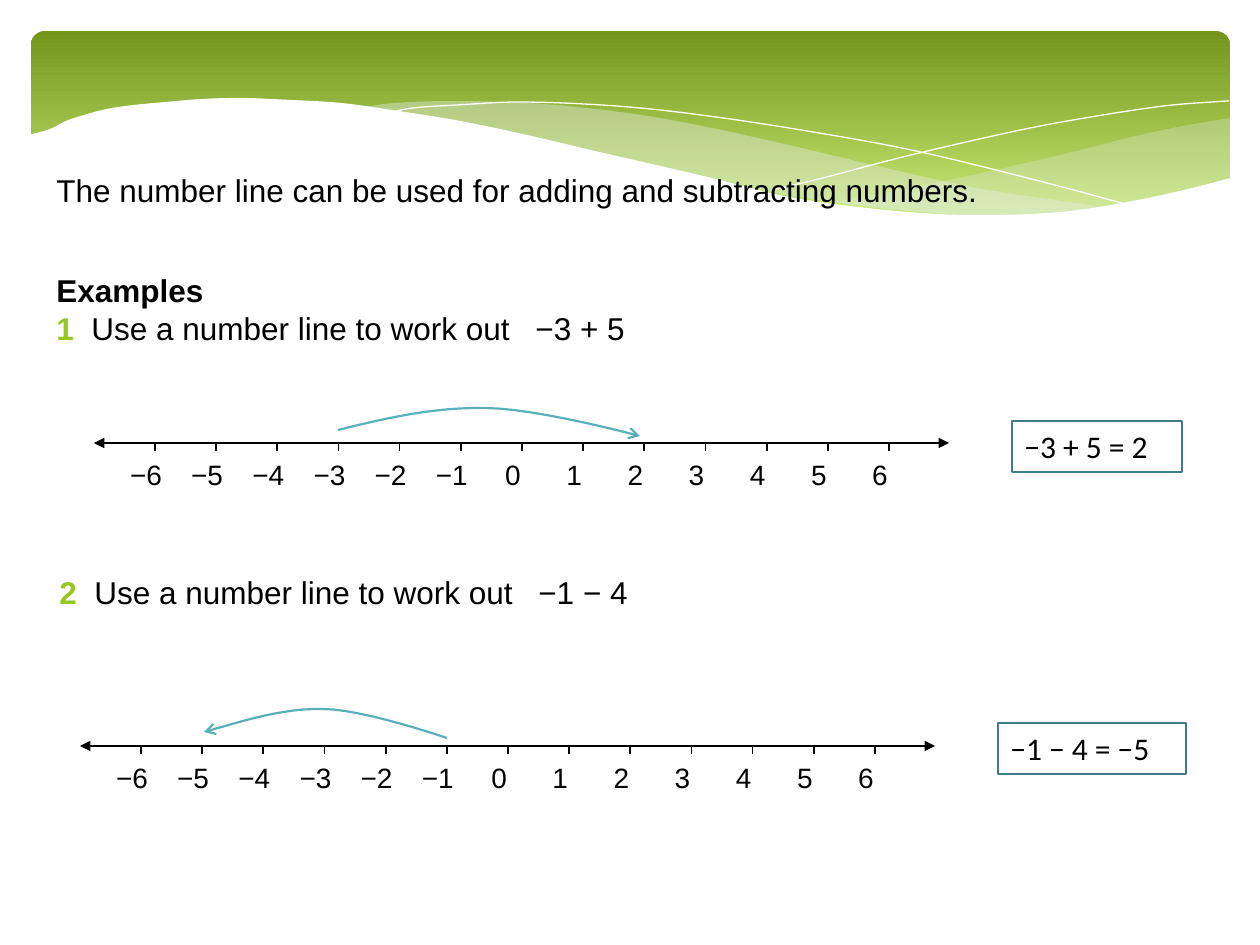
from lxml.etree import SubElement
from pptx import Presentation
from pptx.dml.color import RGBColor
from pptx.enum.shapes import MSO_CONNECTOR, MSO_SHAPE
from pptx.enum.text import MSO_ANCHOR
from pptx.oxml.ns import qn
from pptx.util import Pt

PX = 914400 / 126
COLORS = {
    "black": "000000", "white": "FFFFFF", "mist": "E7ECED", "number": "98C723",
    "dark_green": "72951A", "light_green": "C5E672", "arc": "59B0B9", "box": "3F7C83",
}
INTRO = "The number line can be used for adding and subtracting numbers."
LABELS = ["−6", "−5", "−4", "−3", "−2", "−1", "0", "1", "2", "3", "4", "5", "6"]
TICK_START, TICK_SPAN, TICK_HEIGHT, LINE_WIDTH = 61, 734, 8, 855
LABEL_SHIFT, LABEL_MARGIN = -9, 28
QUESTION_TABS = [35, 479]

EXAMPLES = [
    {"number": "1", "sum": "−3 + 5", "heading": "Examples", "question": (44, 265, 601, 89),
     "line": (94, 443), "answer": "−3 + 5 = 2", "answer_box": (1012, 421, 170, 51),
     "arc": [(338, 430), (386, 418), (435, 407), (485, 408),
             (536, 408), (640, 436), (640, 436)]},
    {"number": "2", "sum": "−1 − 4", "heading": None, "question": (47, 567, 601, 51),
     "line": (80, 746), "answer": "−1 − 4 = −5", "answer_box": (998, 723, 188, 51),
     "arc": [(447, 738), (447, 738), (363, 709), (323, 709),
             (282, 708), (243, 721), (204, 732)]},
]

RIGHT_WAVE = [
    [(1230, 118), (1178, 127), (1123, 139), (1085, 149), (982, 173), (890, 192), (833, 202)],
    [(833, 202), (906, 210), (969, 215), (1026, 217), (1076, 214), (1130, 208),
     (1178, 197), (1230, 178)],
]
MIDDLE_WAVE = [
    [(1125, 210), (1055, 200), (977, 188), (890, 169), (793, 146), (717, 129), (648, 116),
     (586, 108), (529, 103), (455, 101), (394, 103), (360, 108)],
    [(360, 108), (431, 118), (509, 134), (619, 159), (713, 180), (799, 197), (876, 208),
     (942, 214), (1017, 218), (1080, 215), (1125, 210)],
]
FALLING_LINE = [[(389, 113), (413, 108), (457, 105), (524, 102), (616, 106), (701, 115),
                 (801, 130), (916, 151), (1047, 183), (1143, 209)]]
RISING_LINE = [[(772, 190), (823, 178), (907, 156), (1016, 131), (1091, 117), (1164, 106),
                (1213, 102), (1229, 101)]]
WHITE_WAVE = [
    [(1231, 178), (1184, 190), (1133, 201), (1071, 211), (1003, 215), (937, 214), (867, 208),
     (789, 197), (699, 175), (599, 152), (527, 135), (460, 121), (398, 111), (341, 103),
     (290, 100), (243, 98), (203, 99), (166, 102), (134, 105), (107, 109), (84, 115),
     (66, 121), (50, 129), (29, 135)],
    [(29, 282), (1231, 282)],
]


def px(value):
    return round(value * PX)


def rgb(name):
    return RGBColor.from_string(COLORS[name])


def bezier(a, b, c, d, steps):
    weights = [((1 - t) ** 3, 3 * t * (1 - t) ** 2, 3 * t * t * (1 - t), t ** 3)
               for t in (i / steps for i in range(1, steps + 1))]
    return [tuple(sum(w * p[k] for w, p in zip(ws, (a, b, c, d))) for k in (0, 1))
            for ws in weights]


def smooth(points):
    ends = [points[0], *points, points[-1]]
    result = [points[0]]
    for p0, p1, p2, p3 in zip(ends, ends[1:], ends[2:], ends[3:]):
        b = tuple(p1[k] + (p2[k] - p0[k]) / 6 for k in (0, 1))
        c = tuple(p2[k] - (p3[k] - p1[k]) / 6 for k in (0, 1))
        result += bezier(p1, b, c, p2, 6)
    return result


def add_path(points, fill=None, alpha=None, line=None, width=0):
    (x, y), *rest = [(px(x), px(y)) for x, y in points]
    builder = s.shapes.build_freeform(x, y)
    builder.add_line_segments(rest, close=fill is not None)
    sp = builder.convert_to_shape()
    sp.shadow.inherit = False
    if fill:
        sp.fill.solid()
        sp.fill.fore_color.rgb = rgb(fill)
        sp.line.fill.background()
    else:
        sp.fill.background()
        sp.line.color.rgb = rgb(line)
        sp.line.width = Pt(width)
    if alpha:
        color = sp.element.spPr.find(qn("a:solidFill")).find(qn("a:srgbClr"))
        SubElement(color, qn("a:alpha"), val=str(alpha * 1000))
    return sp


def add_wave(edges, **style):
    return add_path([point for edge in edges for point in smooth(edge)], **style)


def add_arrowhead(sp, end, kind):
    SubElement(sp.element.spPr.find(qn("a:ln")), qn(f"a:{end}"), type=kind)


def add_line(x1, y1, x2, y2):
    cn = s.shapes.add_connector(MSO_CONNECTOR.STRAIGHT, px(x1), px(y1), px(x2), px(y2))
    cn.line.color.rgb = rgb("black")
    cn.line.width = Pt(1)
    SubElement(cn.element.spPr, qn("a:effectLst"))
    return cn


def set_font(font, size, name="Arial"):
    font.size, font.name = Pt(size), name
    font.color.rgb = rgb("black")


def set_tabs(p, stops, align="l"):
    tabs = SubElement(p._p.get_or_add_pPr(), qn("a:tabLst"))
    for stop in stops:
        SubElement(tabs, qn("a:tab"), pos=str(px(stop)), algn=align)


def add_text(box, text, size=18):
    sp = s.shapes.add_textbox(*map(px, box))
    sp.text_frame.word_wrap = True
    p = sp.text_frame.paragraphs[0]
    p.text = text
    set_font(p.font, size)
    return sp.text_frame


def add_question(example):
    tf = add_text(example["question"], example["heading"] or "")
    p = tf.paragraphs[0]
    if example["heading"]:
        p.font.bold = True
        p = tf.add_paragraph()
        set_font(p.font, 18)
    set_tabs(p, QUESTION_TABS)
    r = p.add_run()
    r.text = example["number"]
    r.font.bold = True
    r.font.color.rgb = rgb("number")
    set_font(r.font, 18)
    r.font.color.rgb = rgb("number")
    r = p.add_run()
    r.text = f"\tUse a number line to work out\t{example['sum']}"
    set_font(r.font, 18)


def add_number_line(x, y):
    axis = add_line(x, y, x + LINE_WIDTH, y)
    for end in ("headEnd", "tailEnd"):
        add_arrowhead(axis, end, "triangle")
    step = TICK_SPAN / (len(LABELS) - 1)
    for i in range(len(LABELS)):
        tick = x + TICK_START + i * step
        add_line(tick, y, tick, y + TICK_HEIGHT)
    left = x + TICK_START + LABEL_SHIFT - LABEL_MARGIN
    tf = add_text((left, y + TICK_HEIGHT, 806, 47), "\t" + "\t".join(LABELS), 16)
    tf.margin_left = tf.margin_right = 0
    set_tabs(tf.paragraphs[0], [LABEL_MARGIN + i * step for i in range(len(LABELS))], "ctr")


def add_answer(box, text):
    sp = s.shapes.add_shape(MSO_SHAPE.RECTANGLE, *map(px, box))
    sp.shadow.inherit = False
    sp.fill.solid()
    sp.fill.fore_color.rgb = rgb("white")
    sp.line.color.rgb = rgb("box")
    sp.line.width = Pt(1.25)
    tf = sp.text_frame
    tf.word_wrap = False
    tf.vertical_anchor = MSO_ANCHOR.TOP
    p = tf.paragraphs[0]
    p.text = text
    p.alignment = 1
    set_font(p.font, 18, "Calibri")


prs = Presentation()
prs.slide_width, prs.slide_height = px(1260), px(945)
s = prs.slides.add_slide(prs.slide_layouts[6])

banner = s.shapes.add_shape(MSO_SHAPE.ROUNDED_RECTANGLE, *map(px, (31, 31, 1199, 197)))
banner.adjustments[0] = 0.07
banner.shadow.inherit = False
banner.line.fill.background()
banner.fill.gradient()
banner.fill.gradient_angle = 270
for stop, name, position in zip(banner.fill.gradient_stops, ("dark_green", "light_green"), (0, 0.9)):
    stop.color.rgb = rgb(name)
    stop.position = position

add_wave(RIGHT_WAVE, fill="mist", alpha=29)
add_wave(MIDDLE_WAVE, fill="mist", alpha=40)
add_wave(FALLING_LINE, line="white")
add_wave(RISING_LINE, line="white")
add_wave(WHITE_WAVE, fill="white")

add_text((44, 165, 955, 51), INTRO)
for example in EXAMPLES:
    add_number_line(*example["line"])
    add_question(example)
    a = example["arc"]
    arc = add_path([a[0]] + bezier(*a[:4], 12) + bezier(*a[3:], 12), line="arc", width=1.25)
    add_arrowhead(arc, "tailEnd", "arrow")
    add_answer(example["answer_box"], example["answer"])

prs.save("out.pptx")
